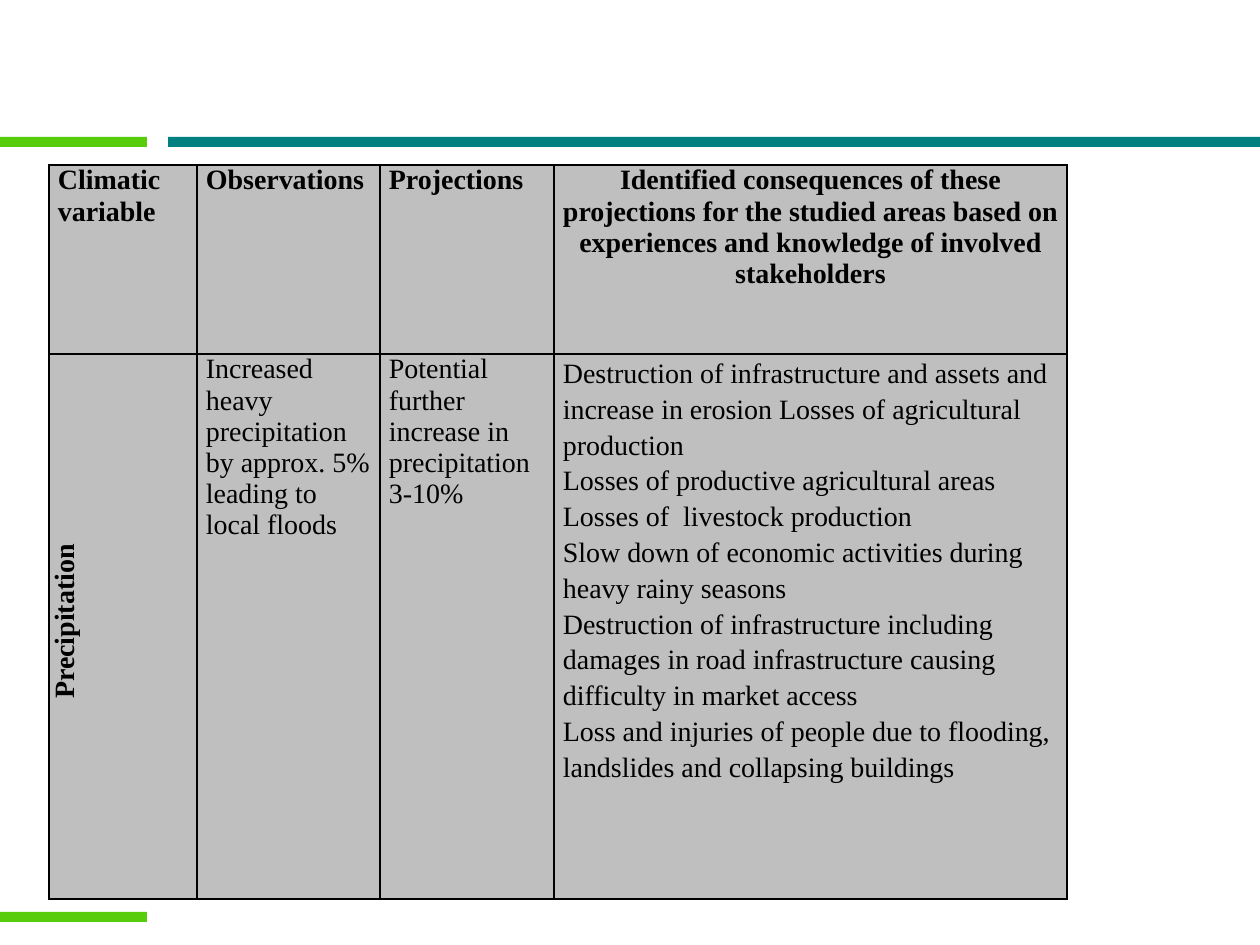
from lxml.etree import SubElement
from pptx import Presentation
from pptx.dml.color import RGBColor
from pptx.enum.shapes import MSO_SHAPE
from pptx.enum.text import MSO_ANCHOR, PP_ALIGN
from pptx.oxml.ns import qn
from pptx.util import Emu, Pt

EMU_PER_INCH = 914400
PX_PER_INCH = 126
TEAL = RGBColor(0x00, 0x80, 0x80)
GREEN = RGBColor(0x56, 0xCC, 0x0B)
GREY = RGBColor(0xBF, 0xBF, 0xBF)
BLACK = RGBColor(0x00, 0x00, 0x00)
FONT_NAME = "Times New Roman"
FONT_SIZE = Pt(16)
BORDER_WIDTH = Pt(1)

SLIDE_WIDTH, SLIDE_HEIGHT = 1260, 945
BAR_HEIGHT = 10
GREEN_BAR_WIDTH = 147
TEAL_BAR_LEFT = 168
TOP_BAR, BOTTOM_BAR = 137, 912
TABLE_LEFT, TABLE_TOP = 49, 165
COLUMN_WIDTHS = [148, 183, 174, 513]
ROW_HEIGHTS = [189, 545]
CELL_MARGIN = 9
ROTATED_INDENT = 10

HEADERS = [
    "Climatic variable",
    "Observations",
    "Projections",
    "Identified consequences of these projections for the studied areas "
    "based on experiences and knowledge of involved stakeholders",
]
VARIABLE = "Precipitation"
OBSERVATION = "Increased heavy precipitation by approx. 5% leading to local floods"
PROJECTION = "Potential further increase in precipitation 3-10%"
CONSEQUENCES = [
    "Destruction of infrastructure and assets and increase in erosion "
    "Losses of agricultural production",
    "Losses of productive agricultural areas",
    "Losses of  livestock production",
    "Slow down of economic activities during heavy rainy seasons",
    "Destruction of infrastructure including damages in road infrastructure "
    "causing difficulty in market access",
    "Loss and injuries of people due to flooding, landslides and collapsing buildings",
]


def px(length):
    return Emu(round(length * EMU_PER_INCH / PX_PER_INCH))


def add_bar(slide, left, top, width, color):
    bar = slide.shapes.add_shape(
        MSO_SHAPE.RECTANGLE, px(left), px(top), px(width), px(BAR_HEIGHT))
    bar.shadow.inherit = False
    bar.fill.solid()
    bar.fill.fore_color.rgb = color
    bar.line.fill.background()


def add_borders(cell):
    properties = cell._tc.get_or_add_tcPr()
    for side in ("a:lnL", "a:lnR", "a:lnT", "a:lnB"):
        line = SubElement(properties, qn(side), w=str(BORDER_WIDTH))
        fill = SubElement(line, qn("a:solidFill"))
        SubElement(fill, qn("a:srgbClr"), val=str(BLACK))


def fill_cell(cell, lines, bold=False, alignment=PP_ALIGN.LEFT, line_spacing=None):
    add_borders(cell)
    cell.fill.solid()
    cell.fill.fore_color.rgb = GREY
    cell.margin_left = cell.margin_right = px(CELL_MARGIN)
    cell.margin_top = cell.margin_bottom = 0
    cell.text_frame.text = "\n".join(lines)
    for paragraph in cell.text_frame.paragraphs:
        paragraph.alignment = alignment
        paragraph.line_spacing = line_spacing
        for run in paragraph.runs:
            run.font.name = FONT_NAME
            run.font.size = FONT_SIZE
            run.font.bold = bold
            run.font.color.rgb = BLACK


def rotate_text(cell):
    """Turn the cell's text to read from bottom to top."""
    cell.vertical_anchor = MSO_ANCHOR.MIDDLE
    cell._tc.get_or_add_tcPr().set("vert", "vert270")
    paragraph_properties = cell.text_frame.paragraphs[0]._p.get_or_add_pPr()
    paragraph_properties.set("marL", str(px(ROTATED_INDENT)))
    paragraph_properties.set("indent", "0")


def add_climate_table(slide):
    table = slide.shapes.add_table(
        len(ROW_HEIGHTS), len(COLUMN_WIDTHS), px(TABLE_LEFT), px(TABLE_TOP),
        px(sum(COLUMN_WIDTHS)), px(sum(ROW_HEIGHTS))).table
    table.first_row = False
    table.horz_banding = False
    for column, width in zip(table.columns, COLUMN_WIDTHS):
        column.width = px(width)
    for row, height in zip(table.rows, ROW_HEIGHTS):
        row.height = px(height)

    last_column = len(HEADERS) - 1
    for index, header in enumerate(HEADERS):
        alignment = PP_ALIGN.CENTER if index == last_column else PP_ALIGN.JUSTIFY
        fill_cell(table.cell(0, index), [header], bold=True, alignment=alignment)

    fill_cell(table.cell(1, 0), [VARIABLE], bold=True, alignment=PP_ALIGN.CENTER)
    rotate_text(table.cell(1, 0))
    fill_cell(table.cell(1, 1), [OBSERVATION])
    fill_cell(table.cell(1, 2), [PROJECTION])
    fill_cell(table.cell(1, 3), CONSEQUENCES, line_spacing=1.15)


def main():
    presentation = Presentation()
    presentation.slide_width = px(SLIDE_WIDTH)
    presentation.slide_height = px(SLIDE_HEIGHT)
    blank_layout = presentation.slide_layouts[6]
    slide = presentation.slides.add_slide(blank_layout)

    add_bar(slide, TEAL_BAR_LEFT, TOP_BAR, SLIDE_WIDTH - TEAL_BAR_LEFT, TEAL)
    for top in (TOP_BAR, BOTTOM_BAR):
        add_bar(slide, 0, top, GREEN_BAR_WIDTH, GREEN)
    add_climate_table(slide)
    presentation.save("out.pptx")


if __name__ == "__main__":
    main()
